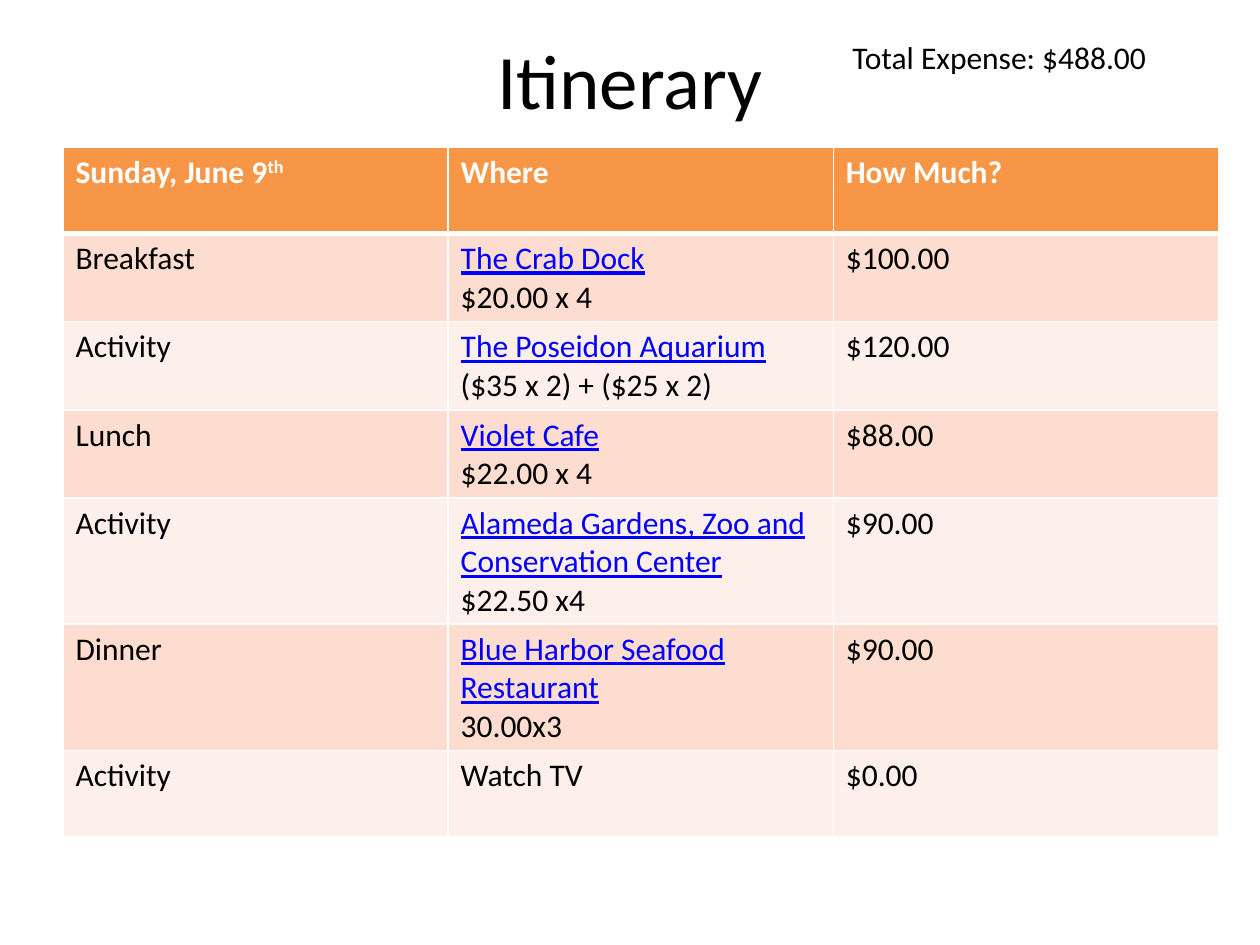
from dataclasses import dataclass

import pptx
import pptx.dml.color
import pptx.enum.text
import pptx.oxml
import pptx.oxml.ns
import pptx.util
from pptx.dml.color import RGBColor
from pptx.util import Pt

BLACK = RGBColor(0x00, 0x00, 0x00)
WHITE = RGBColor(0xFF, 0xFF, 0xFF)
LINK_BLUE = RGBColor(0x00, 0x00, 0xFF)
ORANGE = RGBColor(0xF7, 0x96, 0x46)
PEACH = RGBColor(0xFC, 0xDD, 0xCF)
PALE_PEACH = RGBColor(0xFD, 0xEF, 0xE9)
FONT = "Calibri"
COLUMN_WIDTH = 220.1
ROW_HEIGHT = 49.4


@dataclass(frozen=True)
class Stop:
    occasion: str
    detail: str
    cost: str
    venue: str = ""


STOPS = [
    Stop("Breakfast", "$20.00 x 4", "$100.00", "The Crab Dock"),
    Stop("Activity", "($35 x 2) + ($25 x 2)", "$120.00", "The Poseidon Aquarium"),
    Stop("Lunch", "$22.00 x 4", "$88.00", "Violet Cafe"),
    Stop("Activity", "$22.50 x4", "$90.00",
         "Alameda Gardens, Zoo and Conservation Center"),
    Stop("Dinner", "30.00x3", "$90.00", "Blue Harbor Seafood Restaurant"),
    Stop("Activity", "Watch TV", "$0.00"),
]


def style(paragraph, color: RGBColor, size: float = 18, bold: bool = False,
          underline: bool = False) -> None:
    font = paragraph.font
    font.name, font.size = FONT, Pt(size)
    font.bold, font.underline = bold, underline
    font.color.rgb = color


def border(cell, side: str, width: float) -> None:
    namespace = pptx.oxml.ns.nsdecls("a")
    cell._tc.get_or_add_tcPr().append(pptx.oxml.parse_xml(
        f'<a:ln{side} {namespace} w="{Pt(width)}"><a:solidFill>'
        f'<a:srgbClr val="{WHITE}"/></a:solidFill></a:ln{side}>'))


def dress(cell, row: int, fill: RGBColor) -> None:
    widths = {"L": 1, "R": 1, "T": 3 if row == 1 else 1, "B": 3 if row == 0 else 1}
    for side, width in widths.items():
        border(cell, side, width)
    cell.fill.solid()
    cell.fill.fore_color.rgb = fill


def fill_header(table) -> None:
    for column, heading in enumerate(["Sunday, June 9", "Where", "How Much?"]):
        cell = table.cell(0, column)
        dress(cell, 0, ORANGE)
        cell.text = heading
        style(cell.text_frame.paragraphs[0], WHITE, bold=True)
    ordinal = table.cell(0, 0).text_frame.paragraphs[0].add_run()
    ordinal.text = "th"
    ordinal._r.get_or_add_rPr().set("baseline", "30000")


def fill_stop(table, row: int, stop: Stop) -> None:
    where = f"{stop.venue}\n{stop.detail}" if stop.venue else stop.detail
    for column, text in enumerate([stop.occasion, where, stop.cost]):
        cell = table.cell(row, column)
        dress(cell, row, PEACH if row % 2 else PALE_PEACH)
        cell.text = text
        for paragraph in cell.text_frame.paragraphs:
            is_venue = bool(stop.venue) and paragraph.text == stop.venue
            style(paragraph, LINK_BLUE if is_venue else BLACK, underline=is_venue)


def main() -> None:
    presentation = pptx.Presentation()
    presentation.slide_width, presentation.slide_height = Pt(720), Pt(540)
    slide = presentation.slides.add_slide(presentation.slide_layouts[5])

    title = slide.shapes.title
    title.left, title.top, title.width, title.height = Pt(36), Pt(0), Pt(648), Pt(90)
    title.text_frame.text = "Itinerary"
    title.text_frame.vertical_anchor = pptx.enum.text.MSO_ANCHOR.MIDDLE
    heading = title.text_frame.paragraphs[0]
    heading.alignment = pptx.enum.text.PP_ALIGN.CENTER
    style(heading, BLACK, size=44)

    total = slide.shapes.add_textbox(Pt(480), Pt(18), Pt(222), Pt(29)).text_frame
    total.word_wrap = True
    total.text = "Total Expense: $488.00"
    style(total.paragraphs[0], BLACK)

    row_count = len(STOPS) + 1
    table = slide.shapes.add_table(row_count, 3, Pt(36), Pt(84), Pt(3 * COLUMN_WIDTH),
                                   Pt(row_count * ROW_HEIGHT)).table
    for column in table.columns:
        column.width = Pt(COLUMN_WIDTH)
    for row in table.rows:
        row.height = Pt(ROW_HEIGHT)
    fill_header(table)
    for row, stop in enumerate(STOPS, start=1):
        fill_stop(table, row, stop)

    presentation.save("out.pptx")


if __name__ == "__main__":
    main()
